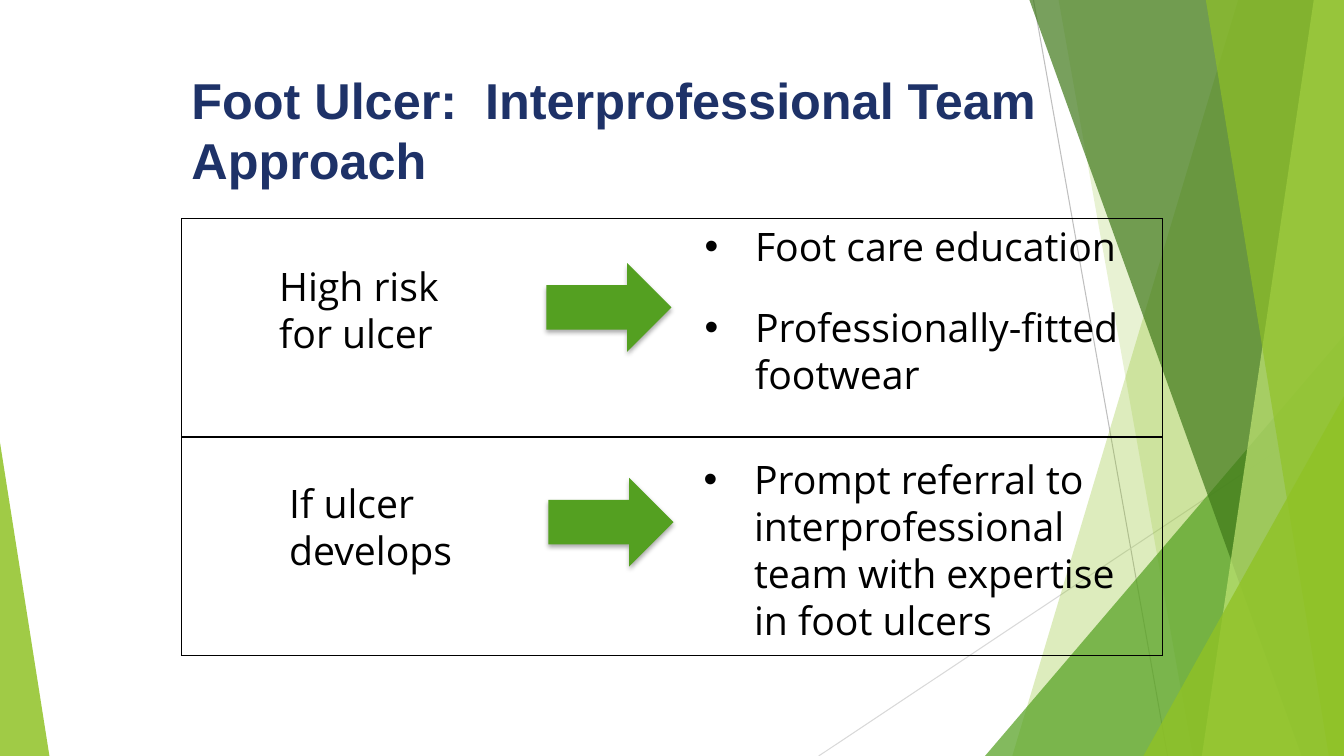
from lxml import etree
from pptx import Presentation
from pptx.dml.color import RGBColor
from pptx.enum.shapes import MSO_CONNECTOR, MSO_SHAPE
from pptx.enum.text import MSO_ANCHOR
from pptx.oxml.ns import qn
from pptx.util import Inches, Pt

STRAIGHT = MSO_CONNECTOR.STRAIGHT
TRIANGLE = MSO_SHAPE.ISOSCELES_TRIANGLE
RIGHT_ARROW = MSO_SHAPE.RIGHT_ARROW
MIDDLE = MSO_ANCHOR.MIDDLE

WIDTH, HEIGHT = 13.33, 7.5
COLORS = {
    "lime": "90C226", "green": "54A021", "forest": "3F7819", "pale": "C0E474",
    "navy": "1E3268", "black": "000000", "grey": "BFBFBF", "light grey": "D9D9D9",
}
TITLE = "Foot Ulcer:  Interprofessional Team Approach"
TITLE_BOX = (1.8, 0.66, 9.47, 1.25)
TABLE_BOX = (1.8, 2.17, 9.73, 4.33)

# One entry per table row: condition, its box, arrow box, actions, their box
PATHWAYS = [
    ("High risk for ulcer", (2.67, 2.55, 2.01, 1.04), (5.42, 2.61, 1.24, 0.88),
     ["Foot care education", "Professionally-fitted footwear"], (6.89, 2.16, 4.64, 1.85)),
    ("If ulcer develops", (2.77, 4.71, 2.01, 1.04), (5.44, 4.74, 1.24, 0.88),
     ["Prompt referral to interprofessional team with expertise in foot ulcers"],
     (6.88, 4.47, 4.51, 1.97)),
]

GUIDE_LINES = [
    ((10.25, 0), (11.58, HEIGHT), "grey"),
    ((WIDTH, 4.03), (8.12, HEIGHT), "light grey"),
]
# Bands: x at top, x at bottom. Triangles: left, width, height, apex share.
FACETS = [
    ("band", (12.28, 10.04), "lime", 30),
    ("band", (10.5, 11.83), "lime", 20),
    ("triangle", (9.77, 3.56, 4.17, 1), "green", 72),
    ("band", (10.21, 12.91), "forest", 70),
    ("band", (13.03, 11.92), "pale", 70),
    ("band", (11.96, 13.18), "lime", 65),
    ("triangle", (11.34, 1.99, 3.57, 1), "lime", 80),
    ("triangle", (0, 0.49, 3.11, 0), "lime", 85),
]


def rgb(name):
    return RGBColor.from_string(COLORS[name])


def inches(values):
    return [Inches(value) for value in values]


def paint(shape, color, opacity=100):
    shape.shadow.inherit = False
    shape.fill.solid()
    shape.fill.fore_color.rgb = rgb(color)
    shape.line.fill.background()
    if opacity < 100:
        color_element = shape.fill._xPr.find(qn("a:solidFill"))[0]
        etree.SubElement(color_element, qn("a:alpha"), val=str(opacity * 1000))


def add_guide_line(slide, start, end, color):
    line = slide.shapes.add_connector(STRAIGHT, *inches(start + end))
    line.line.color.rgb = rgb(color)
    line.line.width = Pt(0.75)
    etree.SubElement(line._element.spPr, qn("a:effectLst"))


def add_facet(slide, kind, geometry, color, opacity):
    if kind == "band":
        top_x, bottom_x = geometry
        corners = [(WIDTH, 0), (WIDTH, HEIGHT), (bottom_x, HEIGHT)]
        builder = slide.shapes.build_freeform(Inches(top_x), 0)
        builder.add_line_segments([inches(corner) for corner in corners], close=True)
        shape = builder.convert_to_shape()
    else:
        left, width, height, apex = geometry
        box = inches((left, HEIGHT - height, width, height))
        shape = slide.shapes.add_shape(TRIANGLE, *box)
        shape.adjustments[0] = apex
    paint(shape, color, opacity)


def add_text(slide, box, lines, size, font, color, bold=False, bullets=False):
    text_box = slide.shapes.add_textbox(*inches(box))
    frame = text_box.text_frame
    frame.word_wrap = True
    frame.text = "\n".join(lines)
    for paragraph in frame.paragraphs:
        run_font = paragraph.runs[0].font
        run_font.size, run_font.name, run_font.bold = Pt(size), font, bold
        run_font.color.rgb = rgb(color)
        if bullets:
            properties = paragraph._p.get_or_add_pPr()
            properties.set("marL", str(Inches(0.5)))
            properties.set("indent", str(-Inches(0.5)))
            etree.SubElement(properties, qn("a:buFont"), typeface="Arial")
            etree.SubElement(properties, qn("a:buChar"), char="•")
    for paragraph in frame.paragraphs[:-1]:
        paragraph.space_after = Pt(24)
    return frame


def add_frame_table(slide):
    """Add the one-column table that shows only as black borders."""
    table = slide.shapes.add_table(len(PATHWAYS), 1, *inches(TABLE_BOX)).table
    table.first_row = table.horz_banding = False
    for cell in table.iter_cells():
        properties = cell._tc.get_or_add_tcPr()
        for side in ("lnL", "lnR", "lnT", "lnB"):
            border = etree.SubElement(properties, qn(f"a:{side}"), w=str(Pt(1)))
            fill = etree.SubElement(border, qn("a:solidFill"))
            etree.SubElement(fill, qn("a:srgbClr"), val=COLORS["black"])
        cell.fill.background()


def add_arrow(slide, box):
    arrow = slide.shapes.add_shape(RIGHT_ARROW, *inches(box))
    paint(arrow, "green")
    effects = arrow._element.spPr.find(qn("a:effectLst"))
    shadow = etree.SubElement(
        effects, qn("a:outerShdw"), blurRad=str(Pt(3.5)), dist=str(Pt(2.2)),
        dir=str(90 * 60000), rotWithShape="0")
    color = etree.SubElement(shadow, qn("a:srgbClr"), val=COLORS["black"])
    etree.SubElement(color, qn("a:alpha"), val="32000")


def main():
    presentation = Presentation()
    presentation.slide_width, presentation.slide_height = inches((WIDTH, HEIGHT))
    slide = presentation.slides.add_slide(presentation.slide_layouts[6])
    for guide_line in GUIDE_LINES:
        add_guide_line(slide, *guide_line)
    for facet in FACETS:
        add_facet(slide, *facet)
    title = add_text(slide, TITLE_BOX, [TITLE], 36, "Arial", "navy", bold=True)
    title.vertical_anchor = MIDDLE
    add_frame_table(slide)
    for condition, condition_box, arrow_box, actions, actions_box in PATHWAYS:
        add_text(slide, condition_box, [condition], 28, "Open Sans", "black")
        add_arrow(slide, arrow_box)
        add_text(slide, actions_box, actions, 28, "Open Sans", "black", bullets=True)
    presentation.save("out.pptx")


if __name__ == "__main__":
    main()
